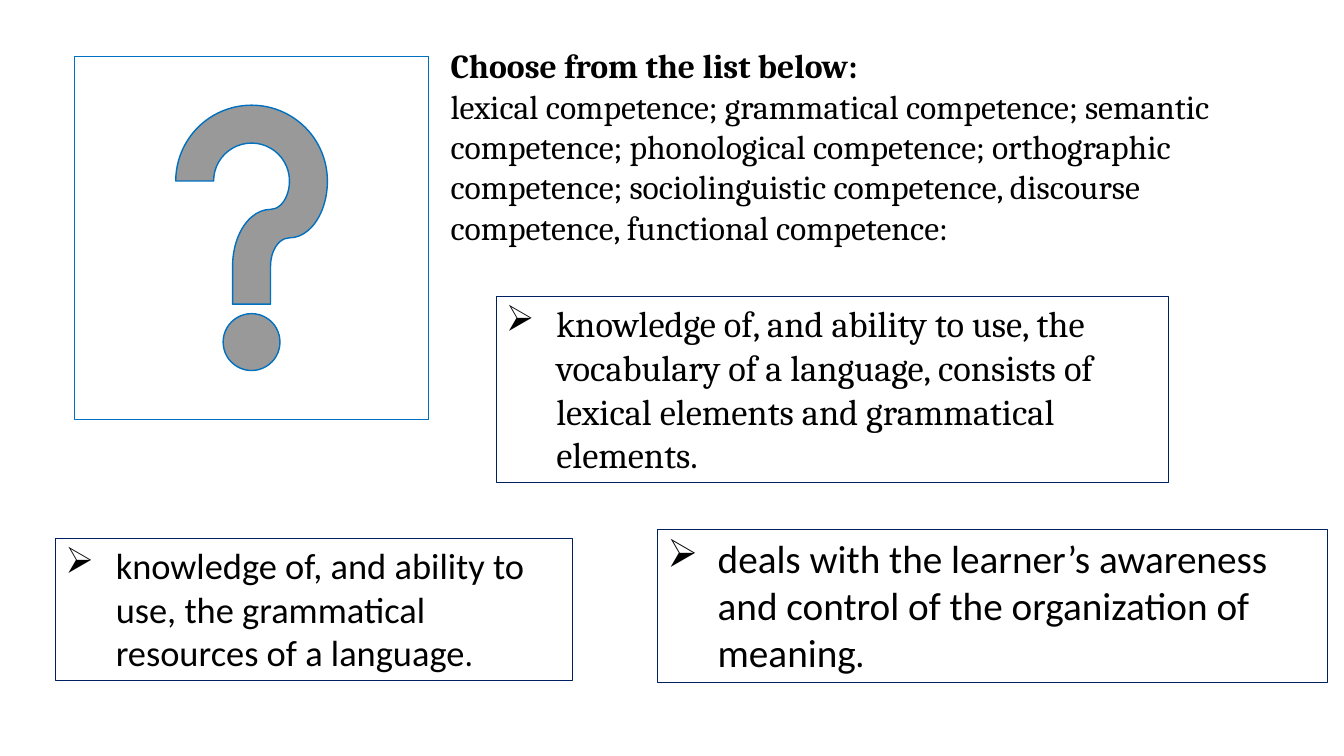
from dataclasses import dataclass

from lxml import etree
from pptx import Presentation
from pptx.dml.color import RGBColor
from pptx.enum.shapes import MSO_SHAPE
from pptx.enum.text import MSO_ANCHOR, PP_ALIGN
from pptx.oxml.ns import qn
from pptx.util import Inches, Pt

HELP_BUTTON = MSO_SHAPE.ACTION_BUTTON_HELP
RECTANGLE = MSO_SHAPE.RECTANGLE
TOP = MSO_ANCHOR.TOP
LEFT = PP_ALIGN.LEFT


@dataclass(frozen=True)
class Theme:
    """Colours, fonts and type sizes of the slide."""
    text: RGBColor = RGBColor(0, 0, 0)
    paper: RGBColor = RGBColor(255, 255, 255)
    icon_line: RGBColor = RGBColor(0x00, 0x70, 0xC0)
    box_line: RGBColor = RGBColor(0x00, 0x20, 0x60)
    serif: str = "Cambria"
    sans: str = "Calibri"
    list_size: Pt = Pt(24)
    box_size: Pt = Pt(26)
    large_size: Pt = Pt(28)


THEME = Theme()

COMPETENCES = (
    "lexical competence; grammatical competence; semantic competence; "
    "phonological competence; orthographic competence; sociolinguistic "
    "competence, discourse competence, functional competence:"
)

DEFINITIONS = [
    ((4.92, 2.94, 6.67, 1.85), THEME.box_size, THEME.serif,
     "knowledge of, and ability to use, the vocabulary of a language, "
     "consists of lexical elements and grammatical elements"),
    ((6.52, 5.25, 6.65, 1.52), THEME.large_size, THEME.sans,
     "deals with the learner’s awareness and control of the organization of meaning"),
    ((0.55, 5.34, 5.13, 1.41), THEME.box_size, THEME.sans,
     "knowledge of, and ability to use, the grammatical resources of a language"),
]


def add_run(p, text, **formats):
    """Add a run and set its font attributes."""
    r = p.add_run()
    r.text = text
    r.font.color.rgb = THEME.text
    for name, value in formats.items():
        setattr(r.font, name, value)


def add_bullet(p):
    """Give a paragraph a hanging arrow bullet."""
    pPr = p._p.get_or_add_pPr()
    pPr.set("marL", str(Inches(0.5)))
    pPr.set("indent", str(-Inches(0.5)))
    etree.SubElement(pPr, qn("a:buChar")).set("char", "➢")


def add_outlined(s, kind, box, color, width):
    """Add a flat preset shape with a coloured outline."""
    sp = s.shapes.add_shape(kind, *map(Inches, box))
    sp.shadow.inherit = False
    sp.line.color.rgb = color
    sp.line.width = width
    return sp


def add_help_icon(s, box):
    """Add the question mark panel."""
    sp = add_outlined(s, HELP_BUTTON, box, THEME.icon_line, Pt(1))
    sp.fill.solid()
    sp.fill.fore_color.rgb = THEME.paper


def add_definition(s, box, size, font, text):
    """Add a framed, bulleted definition."""
    sp = add_outlined(s, RECTANGLE, box, THEME.box_line, Pt(0.75))
    sp.fill.background()
    tf = sp.text_frame
    tf.word_wrap = True
    tf.vertical_anchor = TOP
    p = tf.paragraphs[0]
    p.alignment = LEFT
    add_bullet(p)
    add_run(p, text, size=size, name=font)
    add_run(p, ".", size=size, name=THEME.serif)


def add_choices(s, box, heading, choices):
    """Add the bold prompt with the list of choices under it."""
    tf = s.shapes.add_textbox(*map(Inches, box)).text_frame
    tf.word_wrap = True
    font = {"size": THEME.list_size, "name": THEME.serif}
    add_run(tf.paragraphs[0], heading, bold=True, **font)
    add_run(tf.add_paragraph(), choices, bold=False, **font)


def main():
    """Build and save the slide."""
    prs = Presentation()
    prs.slide_width, prs.slide_height = Inches(13.33), Inches(7.5)
    s = prs.slides.add_slide(prs.slide_layouts[6])
    add_help_icon(s, (0.74, 0.56, 3.51, 3.6))
    add_choices(s, (4.37, 0.4, 8.54, 2.12), "Choose from the list below:", COMPETENCES)
    for definition in DEFINITIONS:
        add_definition(s, *definition)
    prs.save("out.pptx")


if __name__ == "__main__":
    main()
